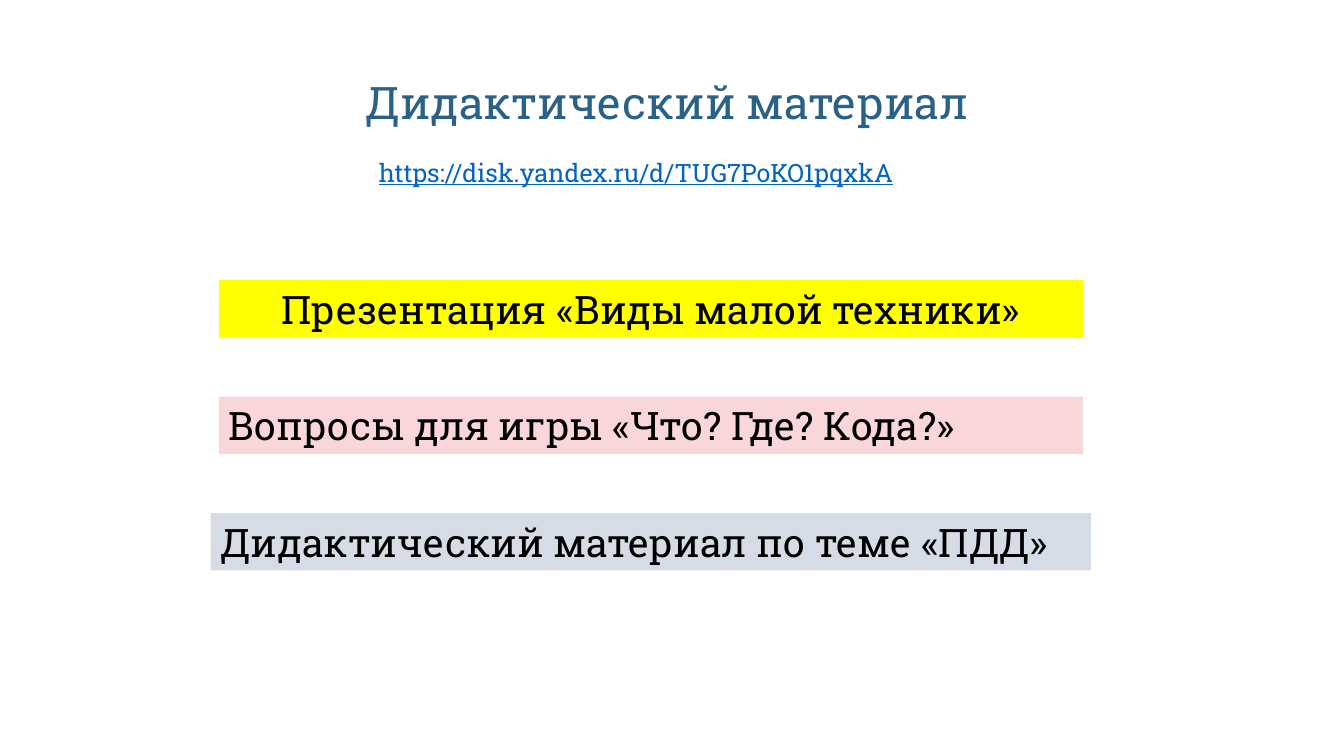
from pptx import Presentation
from pptx import util as u
from pptx.dml import color
from pptx.enum import shapes, text

FONT = "Roboto Slab"
BAND_HEIGHT = 0.57
BAND_TOP = 2.78
BAND_STEP = 1.155
BANDS = [
    ("Презентация «Виды малой техники»", 2.17, 8.57, "FFFF00", text.PP_ALIGN.CENTER),
    ("Вопросы для игры «Что? Где? Кода?»", 2.17, 8.57, "F9D6D9", text.PP_ALIGN.LEFT),
    ("Дидактический материал по теме «ПДД»", 2.09, 8.73, "D6DCE5", text.PP_ALIGN.LEFT),
]


def rgb(value):
    return color.RGBColor.from_string(value)


def inches(*lengths):
    return [u.Inches(length) for length in lengths]


def set_all(target, values):
    for name, value in values.items():
        setattr(target, name, value)


def write(frame, words, size, ink, align, underline=False, **frame_format):
    set_all(frame, {"word_wrap": True, "vertical_anchor": text.MSO_ANCHOR.TOP, **frame_format})
    paragraph = frame.paragraphs[0]
    set_all(paragraph, {"alignment": align, "space_before": u.Pt(0)})
    run = paragraph.add_run()
    run.text = words
    set_all(run.font, {"name": FONT, "size": u.Pt(size), "underline": underline})
    run.font.color.rgb = rgb(ink)
    return paragraph


def add_heading(slide, words):
    heading = slide.shapes.title
    set_all(heading, dict(zip(("left", "top", "width", "height"),
                              inches(0.83, 0.78, 11.58, 1.42))))
    paragraph = write(heading.text_frame, words, 32, "2A6187", text.PP_ALIGN.CENTER,
                      margin_top=u.Inches(0.02))
    paragraph.line_spacing = 0.9


def add_address(slide, words):
    address = slide.shapes.add_textbox(*inches(3.66, 1.51, 5.93, 0.4))
    write(address.text_frame, words, 18, "0563C1", text.PP_ALIGN.LEFT,
          underline=True, word_wrap=False)


def add_band(slide, top, words, left, width, fill, align):
    band = slide.shapes.add_shape(shapes.MSO_SHAPE.RECTANGLE,
                                  *inches(left, top, width, BAND_HEIGHT))
    band.shadow.inherit = False
    band.fill.solid()
    band.fill.fore_color.rgb = rgb(fill)
    band.line.fill.background()
    write(band.text_frame, words, 28, "000000", align)


def main():
    deck = Presentation()
    set_all(deck, {"slide_width": u.Inches(13.33), "slide_height": u.Inches(7.5)})
    slide = deck.slides.add_slide(deck.slide_layouts[5])
    add_heading(slide, "Дидактический материал")
    add_address(slide, "https://disk.yandex.ru/d/TUG7PoKO1pqxkA")
    for row, band in enumerate(BANDS):
        add_band(slide, BAND_TOP + row * BAND_STEP, *band)
    deck.save("out.pptx")


if __name__ == "__main__":
    main()
